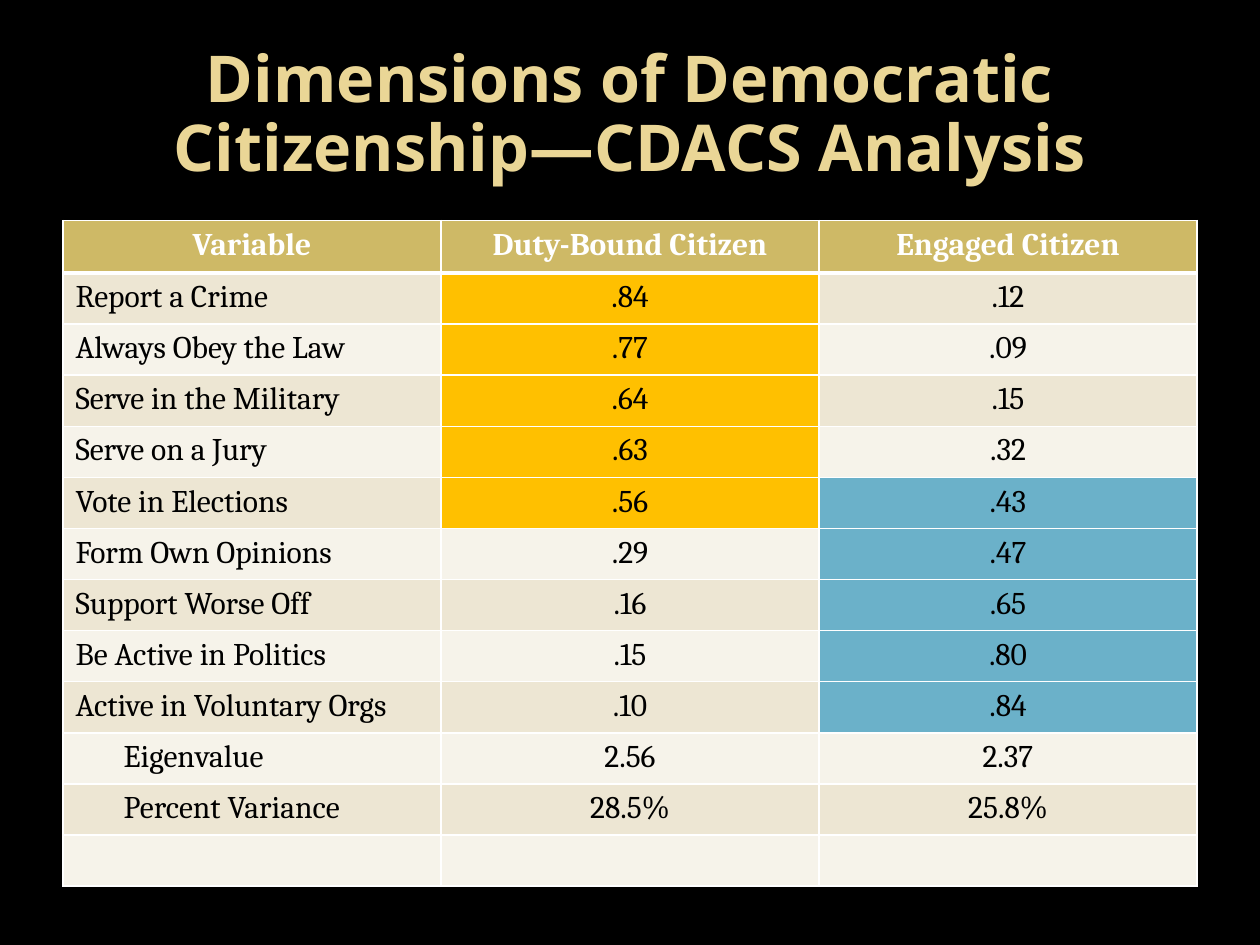
from dataclasses import dataclass

from lxml.etree import SubElement
from pptx import Presentation
from pptx.dml.color import RGBColor
from pptx.enum.text import MSO_ANCHOR, PP_ALIGN
from pptx.oxml.ns import qn
from pptx.util import Pt


@dataclass(frozen=True)
class Theme:
    background: str = "000000"
    title_start: str = "EAD696"
    title_end: str = "E7D081"
    header: str = "CEB966"
    bands: tuple = ("EDE6D3", "F6F3EA")
    duty: str = "FFC000"
    engaged: str = "6BB1C9"
    border: str = "FFFFFF"
    header_text: str = "FFFFFF"
    body_text: str = "000000"
    title_font: str = "Noto Sans"
    table_font: str = "Cambria"
    title_size: float = 36.9
    table_size: float = 18


HEADINGS = ("Variable", "Duty-Bound Citizen", "Engaged Citizen")
LOADINGS = [
    ("Report a Crime", ".84", ".12"),
    ("Always Obey the Law", ".77", ".09"),
    ("Serve in the Military", ".64", ".15"),
    ("Serve on a Jury", ".63", ".32"),
    ("Vote in Elections", ".56", ".43"),
    ("Form Own Opinions", ".29", ".47"),
    ("Support Worse Off", ".16", ".65"),
    ("Be Active in Politics", ".15", ".80"),
    ("Active in Voluntary Orgs", ".10", ".84"),
]
SUMMARY = [("Eigenvalue", "2.56", "2.37"), ("Percent Variance", "28.5%", "25.8%")]
ROWS = [HEADINGS, *LOADINGS, *SUMMARY, ("", "", "")]
HIGH_LOADING = 0.4


class SlideBuilder:
    def __init__(self, slide, theme):
        self.slide = slide
        self.theme = theme

    def background(self):
        fill = self.slide.background.fill
        fill.solid()
        fill.fore_color.rgb = RGBColor.from_string(self.theme.background)

    def title(self, text, left, top, width, height):
        box = self.slide.shapes.add_textbox(Pt(left), Pt(top), Pt(width), Pt(height))
        frame = box.text_frame
        frame.word_wrap = True
        frame.vertical_anchor = MSO_ANCHOR.MIDDLE
        frame.text = text
        para = frame.paragraphs[0]
        para.alignment = PP_ALIGN.CENTER
        para.line_spacing = 0.89
        font = para.runs[0].font
        font.name, font.size, font.bold = self.theme.title_font, Pt(self.theme.title_size), True
        font.fill.gradient()
        font.fill.gradient_angle = 280
        stops = ((0.73, self.theme.title_start), (1, self.theme.title_end))
        for stop, (position, color) in zip(font.fill.gradient_stops, stops):
            stop.position = position
            stop.color.rgb = RGBColor.from_string(color)

    def table(self, rows, left, top, column_width, header_height, row_height):
        count = len(rows[0])
        height = header_height + row_height * (len(rows) - 1)
        table = self.slide.shapes.add_table(
            len(rows), count, Pt(left), Pt(top), Pt(column_width * count), Pt(height)
        ).table
        for column in table.columns:
            column.width = Pt(column_width)
        for r, values in enumerate(rows):
            table.rows[r].height = Pt(row_height if r else header_height)
            for c, text in enumerate(values):
                self.cell(table.cell(r, c), text, r, c)

    def cell(self, cell, text, row, column):
        header = row == 0
        self.borders(cell, top=3 if row == 1 else 1, bottom=3 if header else 1)
        cell.fill.solid()
        cell.fill.fore_color.rgb = RGBColor.from_string(self.cell_color(text, row, column))
        cell.text_frame.text = text
        para = cell.text_frame.paragraphs[0]
        para.alignment = PP_ALIGN.CENTER if header or column else PP_ALIGN.LEFT
        if column == 0 and row > len(LOADINGS) and text:
            para._p.get_or_add_pPr().set("marL", str(Pt(27.5)))
        para.font.size = Pt(self.theme.table_size)
        for span in para.runs:
            font = span.font
            font.name, font.size, font.bold = self.theme.table_font, Pt(self.theme.table_size), header
            color = self.theme.header_text if header else self.theme.body_text
            font.color.rgb = RGBColor.from_string(color)

    def cell_color(self, text, row, column):
        """Pick the header, high-loading or banded fill."""
        if row == 0:
            return self.theme.header
        if column and row <= len(LOADINGS) and float(text) > HIGH_LOADING:
            return (self.theme.duty, self.theme.engaged)[column - 1]
        return self.theme.bands[(row - 1) % 2]

    def borders(self, cell, top, bottom):
        properties = cell._tc.get_or_add_tcPr()
        for side, width in (("L", 1), ("R", 1), ("T", top), ("B", bottom)):
            line = SubElement(properties, qn(f"a:ln{side}"), w=str(Pt(width)))
            fill = SubElement(line, qn("a:solidFill"))
            SubElement(fill, qn("a:srgbClr"), val=self.theme.border)


def main():
    deck = Presentation()
    deck.slide_width, deck.slide_height = Pt(720), Pt(540)
    builder = SlideBuilder(deck.slides.add_slide(deck.slide_layouts[6]), Theme())
    builder.background()
    builder.title("Dimensions of Democratic Citizenship—CDACS Analysis", 36, 21.6, 648, 90)
    builder.table(ROWS, left=36, top=126, column_width=216, header_height=30, row_height=29.2)
    deck.save("out.pptx")


if __name__ == "__main__":
    main()
